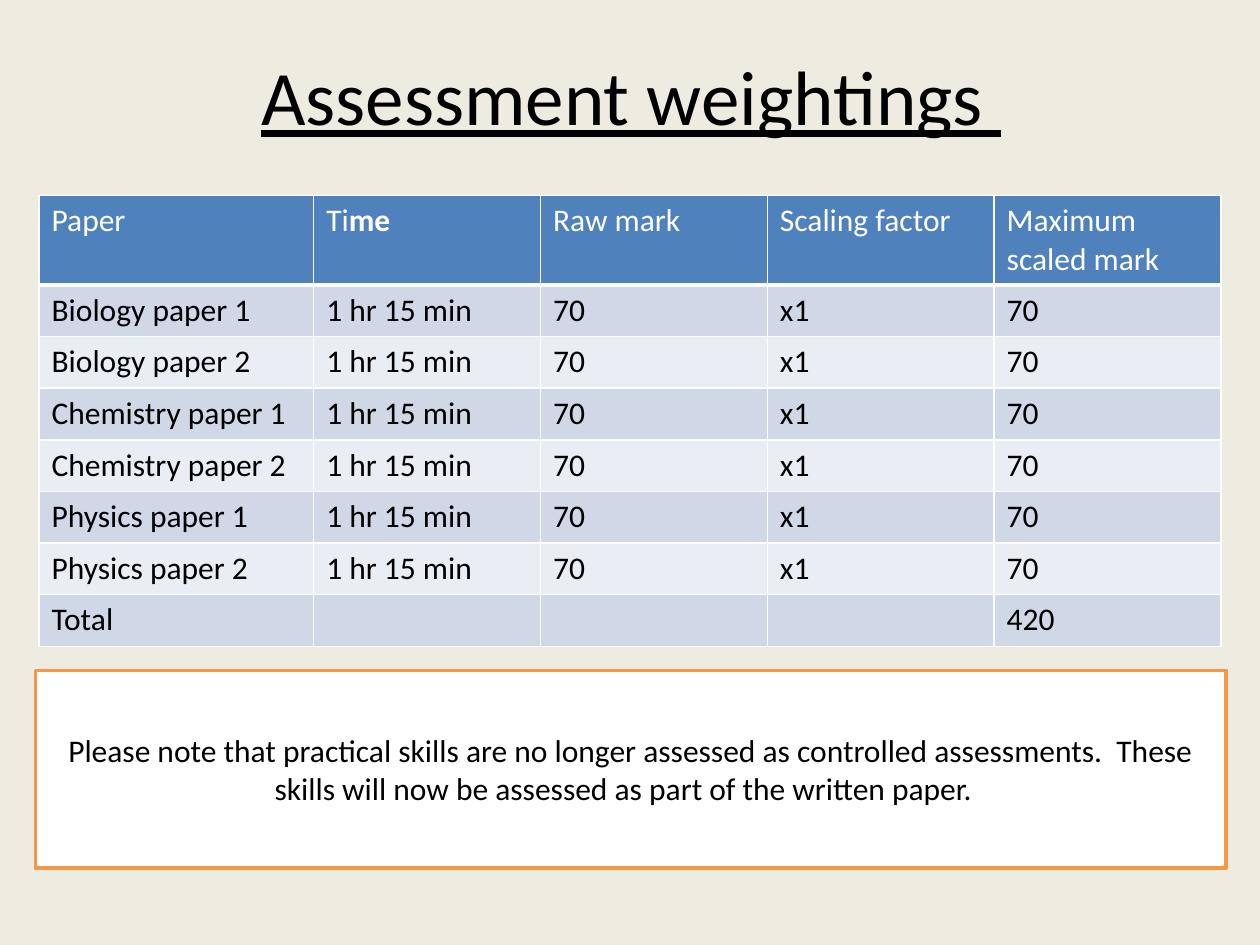
import pptx
import pptx.dml.color
import pptx.enum.shapes
import pptx.enum.text
import pptx.oxml.ns
import pptx.util
from lxml import etree
from pptx.util import Inches

COLOURS = {
    "background": "EEECE1",
    "header": "4F81BD",
    "band_dark": "D0D8E8",
    "band_light": "E9EDF4",
    "white": "FFFFFF",
    "black": "000000",
    "accent": "F79646",
}
HEADINGS = ["Paper", "Time", "Raw mark", "Scaling factor", "Maximum scaled mark"]
SUBJECTS = ["Biology", "Chemistry", "Physics"]
COLUMN_WIDTHS = [2.18, 1.8, 1.8, 1.8, 1.8]
ROW_HEIGHT = 0.41
NOTE = (
    "Please note that practical skills are no longer assessed as controlled "
    "assessments.  These skills will now be assessed as part of the written paper.  "
)


def rgb(name):
    return pptx.dml.color.RGBColor.from_string(COLOURS[name])


def set_fill(fill, colour):
    fill.solid()
    fill.fore_color.rgb = rgb(colour)


def add_text(paragraph, text, size=18, colour="black", bold=False, underline=None, align=None):
    """Append one formatted run to the paragraph."""
    run = paragraph.add_run()
    run.text = text
    font = run.font
    font.name = "Calibri"
    font.size = pptx.util.Pt(size)
    font.bold = bold
    font.underline = underline
    font.color.rgb = rgb(colour)
    if align is not None:
        paragraph.alignment = align


def set_borders(cell, bottom_width=1):
    """Draw white cell borders; call before filling, as the schema orders lines first."""
    properties = cell._tc.get_or_add_tcPr()
    for side, width in (("L", 1), ("R", 1), ("T", 1), ("B", bottom_width)):
        line = etree.SubElement(
            properties, pptx.oxml.ns.qn(f"a:ln{side}"), w=str(pptx.util.Pt(width))
        )
        solid = etree.SubElement(line, pptx.oxml.ns.qn("a:solidFill"))
        etree.SubElement(solid, pptx.oxml.ns.qn("a:srgbClr"), val=COLOURS["white"])


def add_title(slide):
    title = slide.shapes.title
    title.left, title.top = Inches(0.51), Inches(0.13)
    title.width, title.height = Inches(9), Inches(1.25)
    title.text_frame.vertical_anchor = pptx.enum.text.MSO_ANCHOR.MIDDLE
    add_text(title.text_frame.paragraphs[0], "Assessment weightings ", size=44,
             underline=True, align=pptx.enum.text.PP_ALIGN.CENTER)


def add_weightings_table(slide):
    papers = [
        [f"{subject} paper {number}", "1 hr 15 min", "70", "x1", "70"]
        for subject in SUBJECTS
        for number in (1, 2)
    ]
    rows = [HEADINGS, *papers, ["Total", "", "", "", "420"]]
    frame = slide.shapes.add_table(
        len(rows), len(HEADINGS), Inches(0.31), Inches(1.55),
        Inches(sum(COLUMN_WIDTHS)), Inches(ROW_HEIGHT * len(rows)),
    )
    table = frame.table
    for column, width in zip(table.columns, COLUMN_WIDTHS):
        column.width = Inches(width)
    for row_index, values in enumerate(rows):
        table.rows[row_index].height = Inches(ROW_HEIGHT)
        is_header = row_index == 0
        band = "band_dark" if row_index % 2 else "band_light"
        for column_index, value in enumerate(values):
            cell = table.cell(row_index, column_index)
            set_borders(cell, bottom_width=3 if is_header else 1)
            set_fill(cell.fill, "header" if is_header else band)
            paragraph = cell.text_frame.paragraphs[0]
            if value == "Time":
                add_text(paragraph, "Ti", colour="white")
                add_text(paragraph, "me", colour="white", bold=True)
            elif value:
                add_text(paragraph, value, colour="white" if is_header else "black")


def add_note(slide):
    note = slide.shapes.add_shape(
        pptx.enum.shapes.MSO_SHAPE.RECTANGLE,
        Inches(0.28), Inches(5.32), Inches(9.45), Inches(1.57),
    )
    note.shadow.inherit = False
    set_fill(note.fill, "white")
    note.line.color.rgb = rgb("accent")
    note.line.width = pptx.util.Pt(2)
    note.text_frame.word_wrap = True
    note.text_frame.vertical_anchor = pptx.enum.text.MSO_ANCHOR.MIDDLE
    add_text(note.text_frame.paragraphs[0], NOTE, align=pptx.enum.text.PP_ALIGN.CENTER)


def main():
    presentation = pptx.Presentation()
    presentation.slide_width, presentation.slide_height = Inches(10), Inches(7.5)
    slide = presentation.slides.add_slide(presentation.slide_layouts.get_by_name("Title Only"))
    set_fill(slide.background.fill, "background")
    add_title(slide)
    add_weightings_table(slide)
    add_note(slide)
    presentation.save("out.pptx")


if __name__ == "__main__":
    main()
